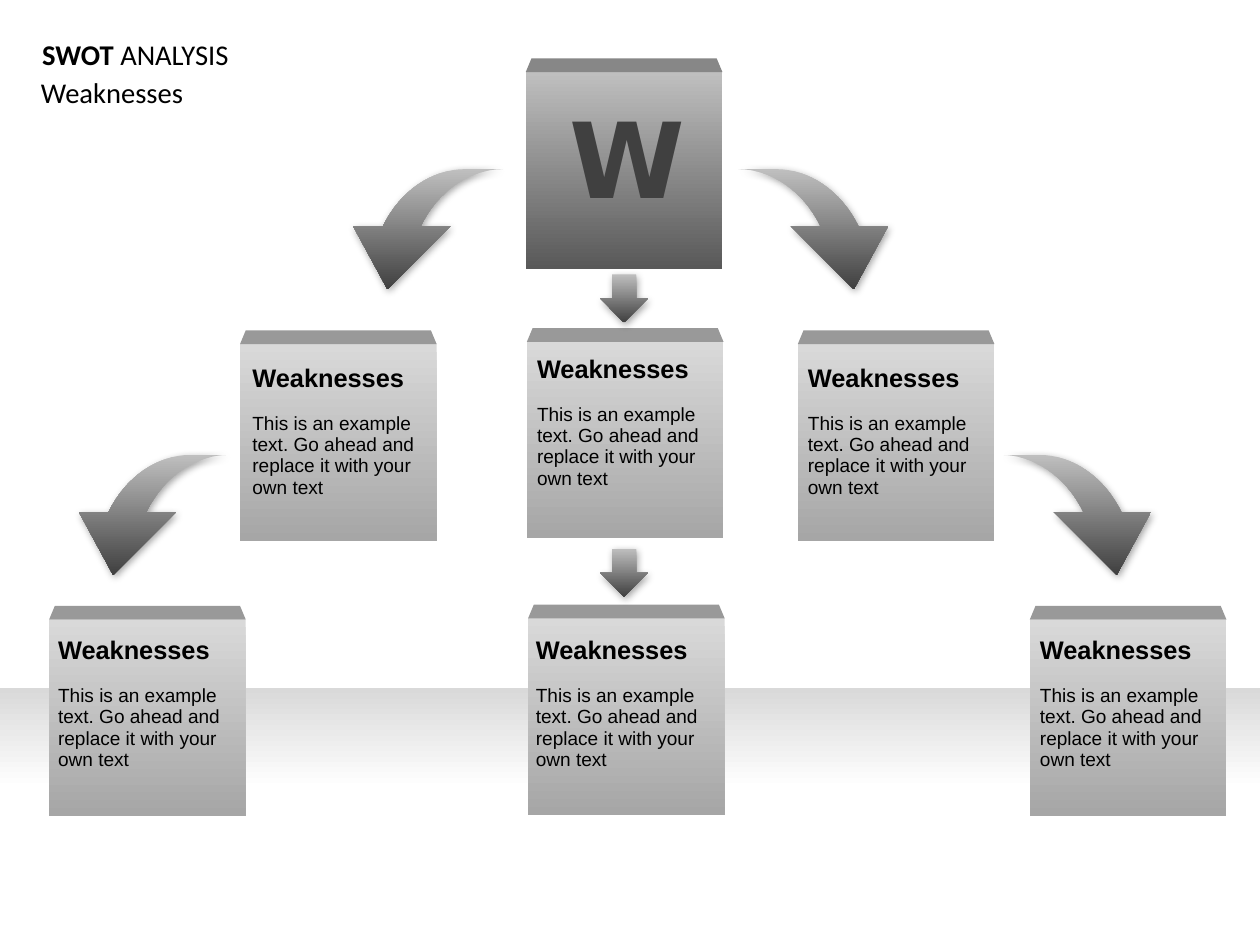
from lxml.etree import SubElement
from pptx import Presentation
from pptx.dml.color import RGBColor
from pptx.enum.shapes import MSO_SHAPE as SHAPE
from pptx.oxml.ns import qn
from pptx.util import Cm, Inches, Pt

SLIDE_W, SLIDE_H = Cm(28), Cm(21)
W, H = SLIDE_W.inches, SLIDE_H.inches
BOX, LID, LID_INSET = 1.72, 0.12, 0.05
BODY = "This is an example text. Go ahead and replace it with your own text"
CARD = [[("Weaknesses", 16, True)], [(BODY, 12, False)]]
TITLES = [
    (0.26, 0.63, 1.46, [("Weaknesses", 18, False)]),
    (0.27, 0.3, 1.85, [("SWOT ", 18, True), ("ANALYSIS", 18, False)]),
]
# box left, box top, text left, text top
CARDS = [
    (2.1, 3.01, 2.11, 3.14), (6.98, 3.01, 6.97, 3.14), (4.61, 2.99, 4.6, 3.06),
    (0.43, 5.42, 0.41, 5.52), (9.01, 5.42, 9, 5.52), (4.62, 5.41, 4.59, 5.52),
]
# left, top, points to the left
SWEEPS = [(6.46, 1.4, False), (3.08, 1.4, True), (8.76, 3.9, False), (0.68, 3.9, True)]
SWEEP_W = 1.32
DOWN_ARROWS = [(5.25, 2.4), (5.25, 4.8)]
DARK, LIGHT, ARROW = ("BFBFBF", "595959"), ("D9D9D9", "A6A6A6"), ("BFBFBF", "404040")

prs = Presentation()
prs.slide_width, prs.slide_height = SLIDE_W, SLIDE_H
shapes = prs.slides.add_slide(prs.slide_layouts[6]).shapes


def color(hex_text):
    return RGBColor.from_string(hex_text)


def paint(sp, colors, angle=270, start=0):
    """Fill with one colour or a two-colour gradient, without an outline."""
    sp.shadow.inherit = False
    sp.line.fill.background()
    if isinstance(colors, str):
        sp.fill.solid()
        sp.fill.fore_color.rgb = color(colors)
        return
    sp.fill.gradient()
    sp.fill.gradient_angle = angle
    for stop, hex_text, position in zip(sp.fill.gradient_stops, colors, (start, 1)):
        stop.color.rgb = color(hex_text)
        stop.position = position


def add_shape(kind, x, y, w, h, colors, **gradient):
    sp = shapes.add_shape(kind, Inches(x), Inches(y), Inches(w), Inches(h))
    paint(sp, colors, **gradient)
    return sp


def cast_shadow(sp):
    effects = sp._element.spPr.find(qn("a:effectLst"))
    shadow = SubElement(effects, qn("a:outerShdw"), blurRad=str(Pt(5)), dist=str(Pt(2)),
                        dir=str(62 * 60000), algn="tl", rotWithShape="0")
    black = SubElement(shadow, qn("a:srgbClr"), val="000000")
    SubElement(black, qn("a:alpha"), val="37000")


def add_text(paragraphs, x, y, w, h, font="Arial", ink="000000", wrap=True, gap=0):
    tf = shapes.add_textbox(Inches(x), Inches(y), Inches(w), Inches(h)).text_frame
    tf.word_wrap = wrap
    for i, runs in enumerate(paragraphs):
        p = tf.paragraphs[0] if i == 0 else tf.add_paragraph()
        p.line_spacing = 0.93
        p.space_before = Pt(gap if i else 0)
        for text, size, bold in runs:
            r = p.add_run()
            r.text = text
            r.font.name, r.font.size, r.font.bold = font, Pt(size), bold
            r.font.color.rgb = color(ink)


def add_block(x, y, colors, lid_color):
    """A square front with a narrow receding lid above it."""
    add_shape(SHAPE.RECTANGLE, x, y, BOX, BOX, colors)
    lid = add_shape(SHAPE.TRAPEZOID, x, y - LID, BOX, LID, lid_color)
    lid.adjustments[0] = LID_INSET / LID


def curve(a, b, c, d, steps=16):
    """Points along a cubic Bezier curve."""
    for i in range(steps + 1):
        t = i / steps
        u = 1 - t
        yield tuple(u**3 * a[k] + 3 * u * u * t * b[k] + 3 * u * t * t * c[k] + t**3 * d[k]
                    for k in (0, 1))


def add_sweep(x, y, mirrored):
    outline = [(1.01, 1.13), (0.46, 0.58),
               *curve((0.72, 0.58), (0.57, 0.27), (0.29, 0.08), (0, 0.08)),
               *curve((0.33, 0.08), (0.62, 0.08), (0.9, 0.27), (1.05, 0.58)),
               (1.31, 0.58)]
    points = [(Inches(x + (SWEEP_W - px if mirrored else px)), Inches(y + py))
              for px, py in outline]
    builder = shapes.build_freeform(*points[0])
    builder.add_line_segments(points[1:])
    sp = builder.convert_to_shape()
    paint(sp, ARROW)
    cast_shadow(sp)


add_shape(SHAPE.RECTANGLE, 0, 6.02, W, H - 6.02, ("FFFFFF", "D9D9D9"), angle=90, start=0.61)
add_block(4.6, 0.63, DARK, "878787")
add_text([[("W", 66, True)]], 4.88, 0.87, 0.89, 1.13,
         font="DejaVu Sans", ink="404040", wrap=False)

for box_x, box_y, text_x, text_y in CARDS:
    add_block(box_x, box_y, LIGHT, "999999")
    add_text(CARD, text_x, text_y, 1.75, 1.57, gap=13)

for sweep in SWEEPS:
    add_sweep(*sweep)
for x, y in DOWN_ARROWS:
    cast_shadow(add_shape(SHAPE.DOWN_ARROW, x, y, 0.42, 0.42, ARROW))
for x, y, w, runs in TITLES:
    add_text([runs], x, y, w, 0.39, font="Calibri", wrap=False)

prs.save("out.pptx")
